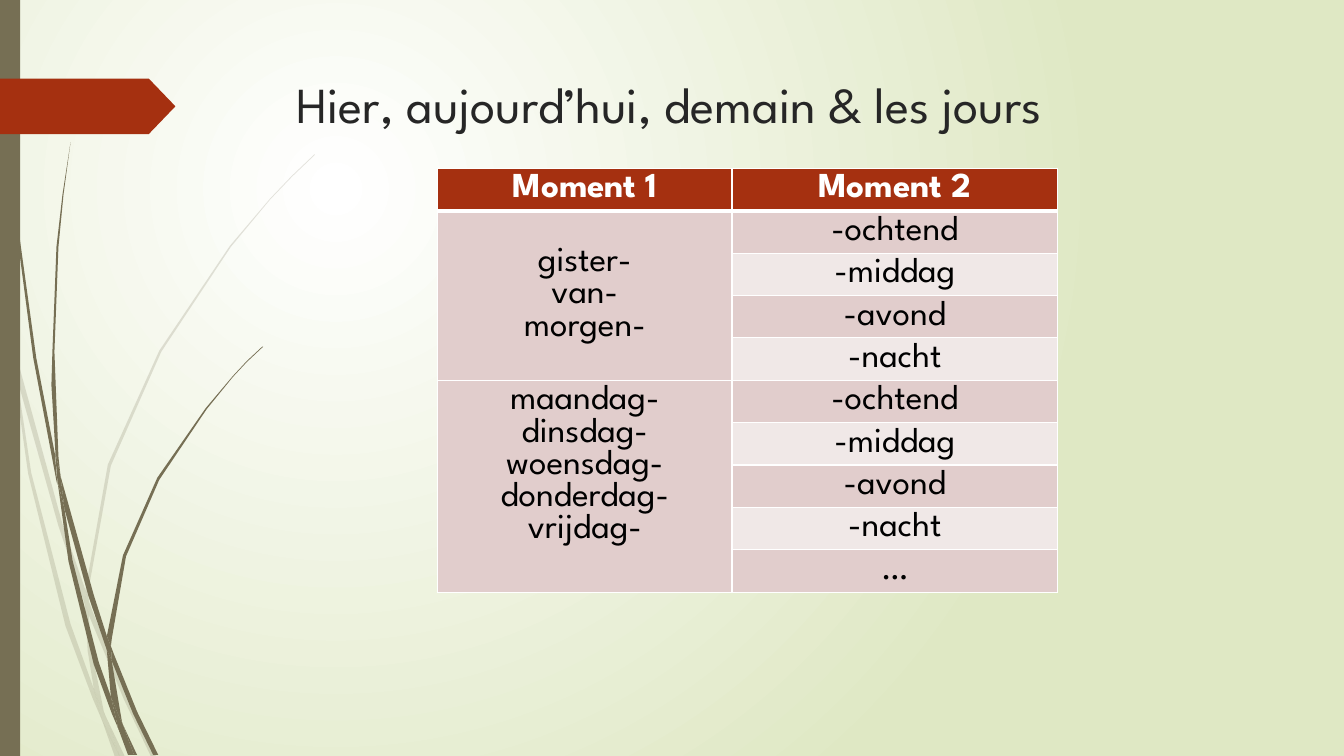
from lxml import etree
from pptx import Presentation
from pptx.dml.color import RGBColor
from pptx.enum.shapes import MSO_SHAPE
from pptx.enum.text import MSO_ANCHOR, MSO_AUTO_SIZE, PP_ALIGN
from pptx.oxml.ns import qn
from pptx.util import Inches, Pt

TOP, MIDDLE = MSO_ANCHOR.TOP, MSO_ANCHOR.MIDDLE
LEFT, CENTER = PP_ALIGN.LEFT, PP_ALIGN.CENTER
FONT = "League Spartan"
BROWN, RED, WHITE = "766F54", "A53010", "FFFFFF"
BANDS = ("E1CDCC", "F0E8E7")

# Content
TITLE = "Hier, aujourd’hui, demain & les jours"
HEADS = ("Moment 1", "Moment 2")
PARTS = ["-ochtend", "-middag", "-avond", "-nacht"]
GROUPS = [
    (["gister-", "van-", "morgen-"], PARTS, MIDDLE),
    (["maandag-", "dinsdag-", "woensdag-", "donderdag-", "vrijdag-"],
     PARTS + ["…"], TOP),
]
COLS, ROW = (2.92, 3.23), 0.42

# Grass: outlines of the blade pieces in inches
PALE = [
    [(0.11, 3.5), (0.09, 3.22), (0, 2.82), (0, 2.99), (0.1, 3.44)],
    [(0.58, 5.22), (0.84, 5.99), (0.85, 5.86), (0.62, 5.2), (0.14, 3.45),
     (0.17, 3.76)],
    [(0.92, 6.07), (0.88, 5.96), (0.88, 6.1), (1.23, 6.94), (1.5, 7.51),
     (1.55, 7.51), (1.27, 6.92)],
    [(1.19, 7.51), (1.24, 7.51), (1.05, 7.11)],
    [(0.93, 6.83), (0.7, 6.19), (0.31, 4.69), (0.17, 3.76), (0.11, 3.5),
     (0.28, 4.7), (0.65, 6.21), (0.92, 6.93), (1.01, 7.14), (0.99, 7.07)],
    [(0.84, 5.99), (0.87, 6.46), (0.93, 6.83), (0.96, 6.92), (1.05, 7.11),
     (1.03, 7.06), (0.91, 6.46), (0.88, 6.1), (0.88, 6.08)],
    [(0.88, 5.84), (1.1, 4.62), (1.6, 3.49), (2.29, 2.45), (2.68, 1.98),
     (2.9, 1.75), (3.12, 1.54), (3.12, 1.53), (2.89, 1.75), (2.68, 1.97),
     (2.28, 2.44), (1.58, 3.48), (1.07, 4.61), (0.85, 5.84), (0.85, 5.86),
     (0.88, 5.96)],
    [(1.01, 7.14), (1.14, 7.51), (1.19, 7.51)],
    [(0.88, 6.08), (0.88, 6.1), (0.88, 5.96), (0.85, 5.86), (0.84, 5.99)],
    [(0.96, 6.92), (0.93, 6.83), (0.99, 7.07), (1.01, 7.14), (1.19, 7.51),
     (1.05, 7.11)],
]
DARK = [
    [(0.07, 1.1), (0.17, 2.33), (0.33, 3.55), (0.56, 4.77), (0.57, 4.81),
     (0.55, 4.57), (0.55, 4.53), (0.36, 3.55), (0.19, 2.32), (0.08, 1.09),
     (0.05, 0.48), (0.04, 0), (0.03, 0), (0.04, 0.48)],
    [(0.88, 5.92), (1.06, 6.45), (1.06, 6.33), (1.06, 6.31), (0.93, 5.9),
     (0.6, 4.72), (0.64, 5.05)],
    [(1.13, 6.49), (1.1, 6.41), (1.11, 6.56), (1.32, 7.08), (1.52, 7.49),
     (1.57, 7.49), (1.36, 7.06)],
    [(1.1, 6.91), (0.98, 6.57), (0.72, 5.56), (0.64, 5.05), (0.57, 4.77),
     (0.68, 5.57), (0.93, 6.59), (1.11, 7.08), (1.17, 7.22), (1.16, 7.17)],
    [(0.6, 4.72), (0.58, 4.53), (0.54, 3.49), (0.58, 2.45), (0.63, 1.93),
     (0.7, 1.41), (0.62, 1.93), (0.56, 2.45), (0.52, 3.49), (0.51, 3.82),
     (0.55, 4.49)],
    [(1.33, 7.49), (1.36, 7.49), (1.22, 7.19)],
    [(0.57, 4.77), (0.64, 5.05), (0.6, 4.72), (0.55, 4.49), (0.55, 4.53)],
    [(1.11, 6.33), (1.25, 5.52), (1.58, 4.76), (2.05, 4.06), (2.31, 3.74),
     (2.45, 3.59), (2.61, 3.44), (2.6, 3.44), (2.45, 3.58), (2.31, 3.73),
     (2.04, 4.05), (1.56, 4.74), (1.22, 5.51), (1.06, 6.31), (1.1, 6.41)],
    [(1.17, 7.22), (1.27, 7.49), (1.31, 7.49)],
    [(1.06, 6.45), (1.1, 6.91), (1.16, 7.06), (1.22, 7.19), (1.21, 7.16),
     (1.11, 6.56), (1.09, 6.51)],
    [(1.06, 6.45), (1.09, 6.51), (1.11, 6.56), (1.1, 6.41), (1.06, 6.31),
     (1.06, 6.33)],
    [(1.16, 7.06), (1.1, 6.91), (1.16, 7.17), (1.17, 7.22), (1.3, 7.49),
     (1.33, 7.49), (1.22, 7.19)],
]


def color(code):
    return RGBColor.from_string(code)


def paint(shape, code, alpha=100):
    shape.shadow.inherit = False
    shape.line.fill.background()
    shape.fill.solid()
    shape.fill.fore_color.rgb = color(code)
    if alpha < 100:
        tone = shape._element.spPr.find(".//" + qn("a:srgbClr"))
        etree.SubElement(tone, qn("a:alpha"), val=str(alpha * 1000))


def write(frame, lines, size, code, align, bold=False):
    for i, line in enumerate(lines):
        para = frame.paragraphs[0] if i == 0 else frame.add_paragraph()
        para.alignment = align
        run = para.add_run()
        run.text = line
        run.font.name, run.font.size, run.font.bold = FONT, Pt(size), bold
        run.font.color.rgb = color(code)


def style(cell, fill, anchor, base=1):
    props = cell._tc.get_or_add_tcPr()
    for side, width in (("L", 1), ("R", 1), ("T", 1), ("B", base)):
        edge = etree.SubElement(props, qn("a:ln" + side), w=str(Pt(width)))
        solid = etree.SubElement(edge, qn("a:solidFill"))
        etree.SubElement(solid, qn("a:srgbClr"), val=WHITE)
    cell.fill.solid()
    cell.fill.fore_color.rgb = color(fill)
    cell.vertical_anchor = anchor


def main():
    deck = Presentation()
    deck.slide_width, deck.slide_height = Inches(13.33), Inches(7.5)
    slide = deck.slides.add_slide(deck.slide_layouts[5])
    shapes = slide.shapes

    # Background glow
    fill = slide.background.fill
    fill.gradient()
    for stop, code in zip(fill.gradient_stops, (WHITE, "DFE8C4")):
        stop.color.rgb = color(code)
    grad = slide._element.find(".//" + qn("a:gradFill"))
    grad.remove(grad.find(qn("a:lin")))
    glow = etree.SubElement(grad, qn("a:path"), path="circle")
    etree.SubElement(glow, qn("a:fillToRect"),
                     l="50000", t="50000", r="100000", b="100000")

    # Grass, side bar and red tag
    for pieces, alpha in ((PALE, 20), (DARK, 100)):
        for piece in pieces:
            points = [(Inches(x), Inches(y)) for x, y in piece]
            form = shapes.build_freeform(*points[0])
            form.add_line_segments(points[1:], close=True)
            paint(form.convert_to_shape(), BROWN, alpha)
    bar = shapes.add_shape(MSO_SHAPE.RECTANGLE, 0, 0, Inches(0.2), Inches(7.5))
    paint(bar, BROWN)
    tag = shapes.add_shape(MSO_SHAPE.PENTAGON, 0, Inches(0.78),
                           Inches(1.74), Inches(0.55))
    tag.adjustments[0] = 0.48
    paint(tag, RED)

    # Title
    title = shapes.title
    title.left, title.top = Inches(2.84), Inches(0.68)
    title.width, title.height = Inches(9.75), Inches(1.4)
    frame = title.text_frame
    frame.auto_size = MSO_AUTO_SIZE.NONE
    frame.vertical_anchor = TOP
    write(frame, [TITLE], 36, "262626", LEFT)

    # Table
    count = 1 + sum(len(parts) for _, parts, _ in GROUPS)
    table = shapes.add_table(count, len(COLS), Inches(4.34), Inches(1.67),
                             Inches(sum(COLS)), Inches(ROW * count)).table
    for col, width in zip(table.columns, COLS):
        col.width = Inches(width)
    for i, head in enumerate(HEADS):
        cell = table.cell(0, i)
        style(cell, RED, TOP, 3)
        write(cell.text_frame, [head], 25, WHITE, CENTER, True)
    row = 1
    for days, parts, anchor in GROUPS:
        first = table.cell(row, 0)
        first.merge(table.cell(row + len(parts) - 1, 0))
        write(first.text_frame, days, 25, "000000", CENTER)
        for i, part in enumerate(parts):
            style(table.cell(row + i, 0), BANDS[0], anchor)
            cell = table.cell(row + i, 1)
            style(cell, BANDS[i % 2], TOP)
            write(cell.text_frame, [part], 25, "000000", CENTER)
        row += len(parts)

    deck.save("out.pptx")


if __name__ == "__main__":
    main()
